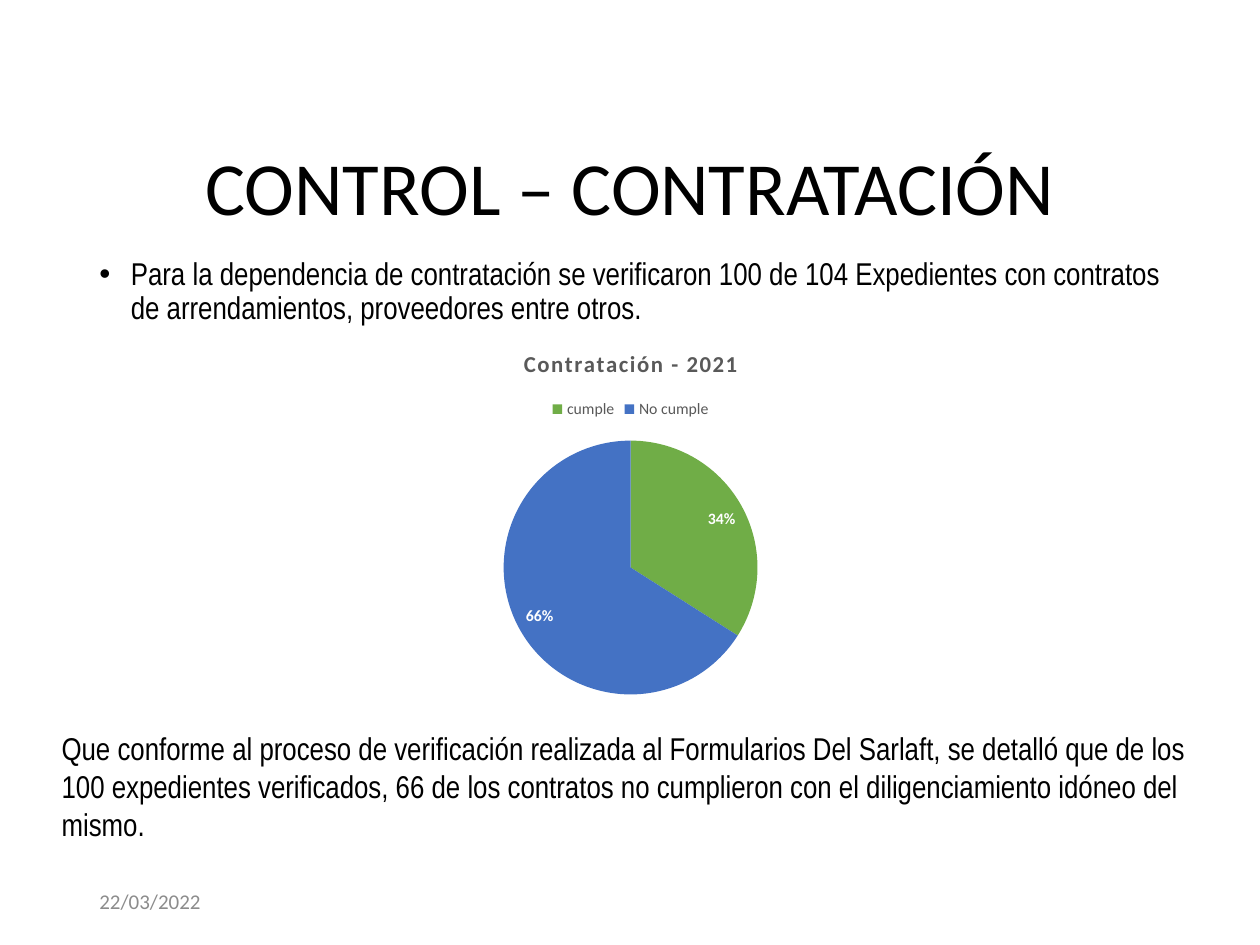
"""Build the slide on contract control results for 2021."""
from lxml import etree
from pptx import Presentation
from pptx.chart.data import CategoryChartData
from pptx.dml.color import RGBColor
from pptx.enum import chart as ch, text
from pptx.oxml.ns import qn
from pptx.util import Pt

BLACK = RGBColor(0x00, 0x00, 0x00)
WHITE = RGBColor(0xFF, 0xFF, 0xFF)
DATE_GRAY = RGBColor(0x8C, 0x8C, 0x8C)
CHART_GRAY = RGBColor(0x59, 0x59, 0x59)
GREEN = RGBColor(0x70, 0xAD, 0x47)
BLUE = RGBColor(0x44, 0x72, 0xC4)
BODY_FONT, MAIN_FONT = "Arial Narrow", "Calibri"

TITLE = "CONTROL – CONTRATACIÓN"
SCOPE = ("Para la dependencia de contratación se verificaron 100 de 104 Expedientes "
         "con contratos de arrendamientos, proveedores entre otros.")
FINDING = ("Que conforme al proceso de verificación realizada al Formularios Del Sarlaft, "
           "se detalló que de los 100 expedientes verificados, 66 de los contratos no "
           "cumplieron con el diligenciamiento idóneo del mismo.")
DATE = "22/03/2022"
CHART_TITLE = "Contratación - 2021"
RESULTS = [("cumple", 34, GREEN), ("No cumple", 66, BLUE)]

MARGIN, CONTENT_WIDTH = 49.68, 620.64
TITLE_BOX = (MARGIN, 82.08, CONTENT_WIDTH, 54.72)
SCOPE_BOX = (MARGIN, 144, CONTENT_WIDTH, 342.72)
FINDING_BOX = (28.08, 413.28, 663.84, 72.72)
DATE_BOX = (MARGIN, 500.4, 162, 28.8)
CHART_BOX = (128.16, 188.64, 464.4, 218.16)
BULLET_INDENT = Pt(18)


def style(font, size, color, name=MAIN_FONT, bold=False):
    font.size, font.name, font.bold = Pt(size), name, bold
    font.color.rgb = color


def add_text(slide, box, words, size, color=BLACK, name=MAIN_FONT,
             anchor=text.MSO_ANCHOR.TOP, align=text.PP_ALIGN.LEFT, spacing=1.0, bullet=None):
    frame = slide.shapes.add_textbox(*map(Pt, box)).text_frame
    frame.word_wrap = True
    frame.vertical_anchor = anchor
    frame.text = words
    paragraph = frame.paragraphs[0]
    paragraph.alignment, paragraph.line_spacing = align, spacing
    if bullet:
        properties = paragraph._p.get_or_add_pPr()
        properties.set("marL", str(BULLET_INDENT))
        properties.set("indent", str(-BULLET_INDENT))
        etree.SubElement(properties, qn("a:buFont")).set("typeface", "Arial")
        etree.SubElement(properties, qn("a:buChar")).set("char", bullet)
    style(paragraph.runs[0].font, size, color, name)


def add_results_chart(slide):
    data = CategoryChartData()
    data.categories = [label for label, _, _ in RESULTS]
    data.add_series("Series 1", [value for _, value, _ in RESULTS])
    chart = slide.shapes.add_chart(ch.XL_CHART_TYPE.PIE, *map(Pt, CHART_BOX), data).chart
    style(chart.font, 10, BLACK)

    chart.has_title = True
    heading = chart.chart_title.text_frame
    heading.text = CHART_TITLE
    heading_run = heading.paragraphs[0].runs[0]
    style(heading_run.font, 13, CHART_GRAY, bold=True)
    heading_run._r.get_or_add_rPr().set("spc", "100")

    chart.has_legend = True
    chart.legend.position = ch.XL_LEGEND_POSITION.TOP
    chart.legend.include_in_layout = False
    style(chart.legend.font, 9, CHART_GRAY)

    pie = chart.plots[0]
    pie.vary_by_categories = True
    for index, (_, _, color) in enumerate(RESULTS):
        fill = pie.series[0].points[index].format.fill
        fill.solid()
        fill.fore_color.rgb = color

    labels = pie.series[0].data_labels
    labels.show_percentage, labels.show_value = True, False
    labels.number_format, labels.number_format_is_linked = "0%", False
    labels.position = ch.XL_LABEL_POSITION.INSIDE_END
    style(labels.font, 9, WHITE, bold=True)


def main():
    deck = Presentation()
    deck.slide_width, deck.slide_height = Pt(720), Pt(540)
    slide = deck.slides.add_slide(deck.slide_layouts[6])
    middle = text.MSO_ANCHOR.MIDDLE
    add_text(slide, SCOPE_BOX, SCOPE, 18, name=BODY_FONT,
             align=text.PP_ALIGN.JUSTIFY, spacing=0.9, bullet="•")
    add_text(slide, TITLE_BOX, TITLE, 42.9, anchor=middle,
             align=text.PP_ALIGN.CENTER, spacing=0.9)
    add_text(slide, FINDING_BOX, FINDING, 18, name=BODY_FONT)
    add_text(slide, DATE_BOX, DATE, 12, DATE_GRAY, anchor=middle)
    add_results_chart(slide)
    deck.save("out.pptx")


if __name__ == "__main__":
    main()
